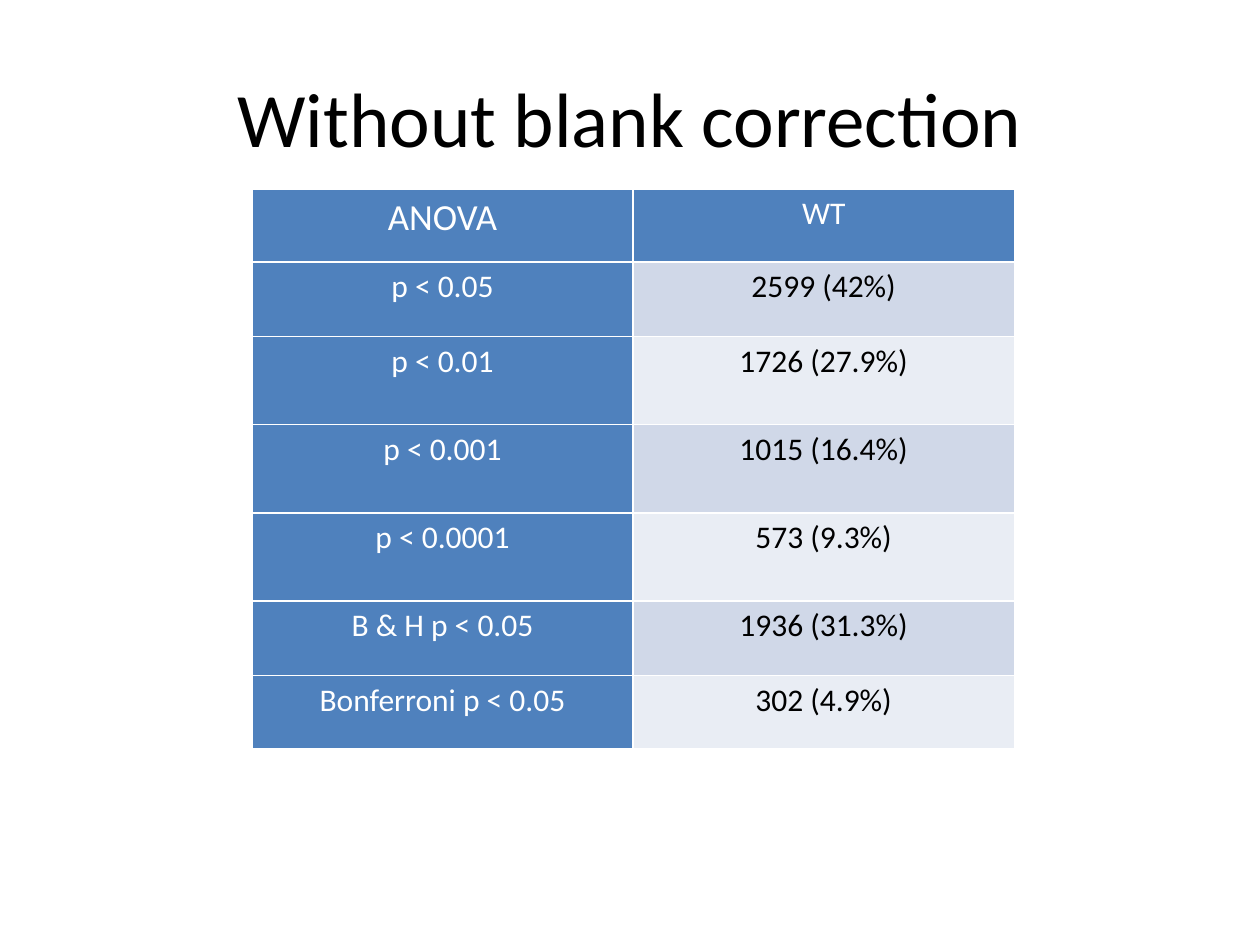
import pptx
import pptx.util
import pptx.dml.color
import pptx.enum.text
import pptx.oxml.ns
import lxml.etree

Inches = pptx.util.Inches
Pt = pptx.util.Pt
Align = pptx.enum.text.PP_ALIGN
Anchor = pptx.enum.text.MSO_ANCHOR
qn = pptx.oxml.ns.qn

BLUE = "4F81BD"
WHITE = "FFFFFF"
BLACK = "000000"
BANDS = ("D0D8E8", "E9EDF4")


def tint(code):
    return pptx.dml.color.RGBColor.from_string(code)


class Deck:
    font = "Calibri"

    def __init__(self, wide, high):
        self.file = pptx.Presentation()
        self.file.slide_width = Inches(wide)
        self.file.slide_height = Inches(high)
        self.slide = self.file.slides.add_slide(self.file.slide_layouts[6])

    def style(self, frame, size, color, space=1.0):
        for para in frame.paragraphs:
            para.alignment = Align.CENTER
            para.line_spacing = space
            for run in para.runs:
                run.font.name = self.font
                run.font.size = Pt(size)
                run.font.color.rgb = tint(color)

    def title(self, text, left, top, wide, high):
        box = self.slide.shapes.add_textbox(
            Inches(left), Inches(top), Inches(wide), Inches(high))
        frame = box.text_frame
        frame.word_wrap = True
        frame.vertical_anchor = Anchor.MIDDLE
        frame.text = text
        self.style(frame, 44, BLACK)

    def border(self, cell):
        props = cell._tc.get_or_add_tcPr()
        for spot, side in enumerate(("a:lnL", "a:lnR", "a:lnT", "a:lnB")):
            line = lxml.etree.Element(qn(side), w=str(Pt(1)))
            fill = lxml.etree.SubElement(line, qn("a:solidFill"))
            lxml.etree.SubElement(fill, qn("a:srgbClr"), val=WHITE)
            props.insert(spot, line)

    def cell(self, cell, text, size, color, fill):
        cell.margin_left = cell.margin_right = Inches(0.07)
        cell.margin_top = cell.margin_bottom = 0
        cell.fill.solid()
        cell.fill.fore_color.rgb = tint(fill)
        cell.text_frame.text = text
        self.style(cell.text_frame, size, color, 1.15)
        self.border(cell)

    def table(self, rows, left, top, wide, highs):
        count = len(rows[0])
        grid = self.slide.shapes.add_table(
            len(rows), count, Inches(left), Inches(top),
            Inches(wide), Inches(sum(highs))).table
        for col in grid.columns:
            col.width = Inches(wide / count)
        for r, (row, high) in enumerate(zip(rows, highs)):
            grid.rows[r].height = Inches(high)
            for c, text in enumerate(row):
                head = r == 0 or c == 0
                self.cell(grid.cell(r, c), text,
                          21 if r == c == 0 else 18,
                          WHITE if head else BLACK,
                          BLUE if head else BANDS[(r - 1) % 2])


def main():
    deck = Deck(10, 7.5)
    rows = [
        ("ANOVA", "WT"),
        ("p < 0.05", "2599 (42%)"),
        ("p < 0.01", "1726 (27.9%)"),
        ("p < 0.001", "1015 (16.4%)"),
        ("p < 0.0001", "573 (9.3%)"),
        ("B & H p < 0.05", "1936 (31.3%)"),
        ("Bonferroni p < 0.05", "302 (4.9%)"),
    ]
    highs = [0.58, 0.59] + [0.7] * 3 + [0.59, 0.58]
    deck.table(rows, 2, 1.5, 6.05, highs)
    deck.title("Without blank correction", 0.5, 0.3, 9, 1.25)
    deck.file.save("out.pptx")


if __name__ == "__main__":
    main()
